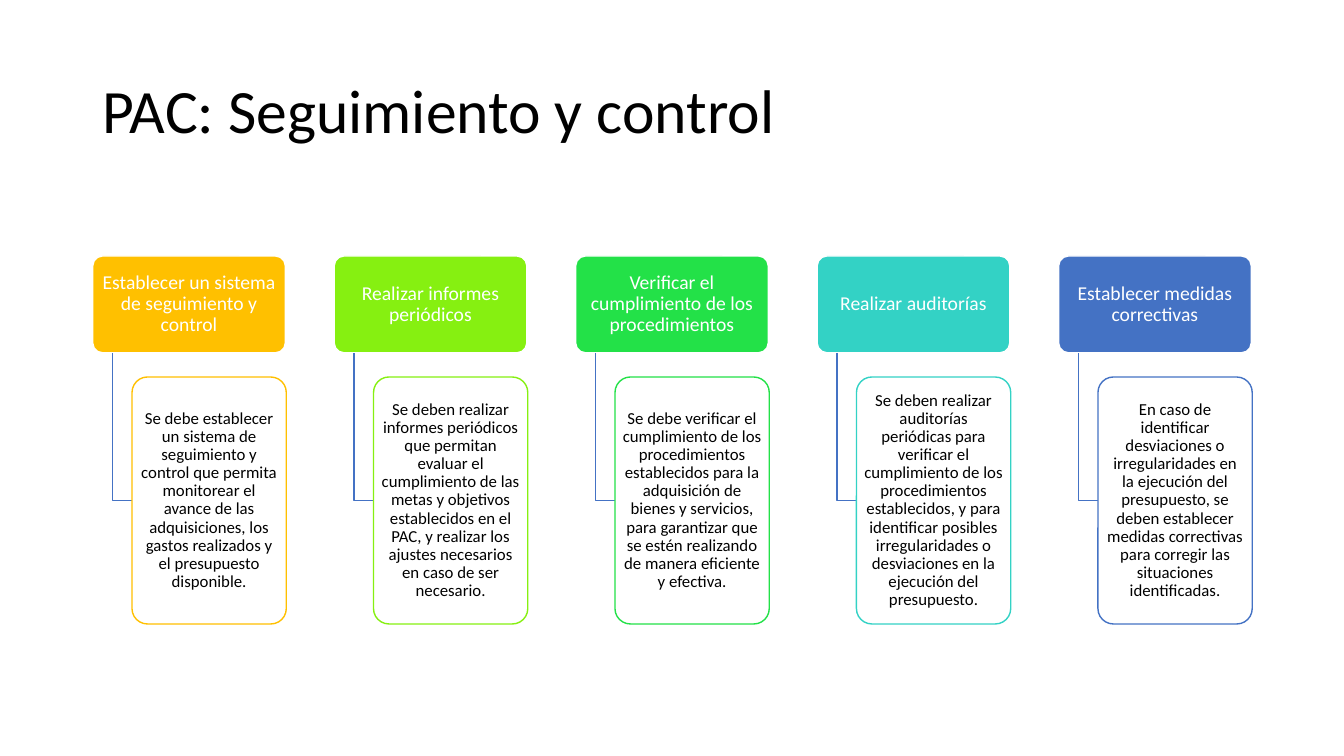
import pptx
import pptx.util
import pptx.dml.color
import pptx.enum.shapes
import pptx.enum.text
import pptx.oxml.ns
import lxml.etree
from dataclasses import dataclass

PX = 9144
ALIGN = pptx.enum.text.PP_ALIGN
MIDDLE = pptx.enum.text.MSO_ANCHOR.MIDDLE


@dataclass(frozen=True)
class Theme:
    font: str = "Calibri"
    dark: str = "000000"
    light: str = "FFFFFF"
    elbow: str = "4472C4"
    title_size: int = 44
    step_size: int = 14
    detail_size: int = 12
    line: int = 1
    detail_opacity: int = 90


THEME = Theme()

STEPS = [
    ("FFC000", "Establecer un sistema de seguimiento y control",
     "Se debe establecer un sistema de seguimiento y control que permita monitorear el avance "
     "de las adquisiciones, los gastos realizados y el presupuesto disponible."),
    ("86F011", "Realizar informes periódicos",
     "Se deben realizar informes periódicos que permitan evaluar el cumplimiento de las metas y "
     "objetivos establecidos en el PAC, y realizar los ajustes necesarios en caso de ser necesario."),
    ("23E148", "Verificar el cumplimiento de los procedimientos",
     "Se debe verificar el cumplimiento de los procedimientos establecidos para la adquisición de "
     "bienes y servicios, para garantizar que se estén realizando de manera eficiente y efectiva."),
    ("33D2C5", "Realizar auditorías",
     "Se deben realizar auditorías periódicas para verificar el cumplimiento de los procedimientos "
     "establecidos, y para identificar posibles irregularidades o desviaciones en la ejecución del "
     "presupuesto."),
    ("4472C4", "Establecer medidas correctivas",
     "En caso de identificar desviaciones o irregularidades en la ejecución del presupuesto, se "
     "deben establecer medidas correctivas para corregir las situaciones identificadas."),
]


def px(n):
    return pptx.util.Emu(round(n * PX))


def rgb(color):
    return pptx.dml.color.RGBColor.from_string(color)


def set_all(target, values):
    for name, value in values.items():
        setattr(target, name, value)


def write(sp, text, size, color, align, insets):
    tf = sp.text_frame
    left, top = insets
    set_all(tf, {"word_wrap": True, "vertical_anchor": MIDDLE,
                 "margin_left": px(left), "margin_right": px(left),
                 "margin_top": px(top), "margin_bottom": px(top)})
    p = tf.paragraphs[0]
    set_all(p, {"alignment": align, "line_spacing": 0.9})
    r = p.add_run()
    r.text = text
    set_all(r.font, {"name": THEME.font, "size": pptx.util.Pt(size)})
    r.font.color.rgb = rgb(color)


def outline(sp, color):
    sp.shadow.inherit = False
    sp.line.color.rgb = rgb(color)
    sp.line.width = pptx.util.Pt(THEME.line)


def add_title(s, box, text):
    sp = s.shapes.add_textbox(*map(px, box))
    write(sp, text, THEME.title_size, THEME.dark, ALIGN.LEFT, (10, 5))


def add_card(s, box, fill, line, text, size, color):
    sp = s.shapes.add_shape(pptx.enum.shapes.MSO_SHAPE.ROUNDED_RECTANGLE, *map(px, box))
    sp.adjustments[0] = 0.1
    sp.fill.solid()
    sp.fill.fore_color.rgb = rgb(fill)
    outline(sp, line)
    write(sp, text, size, color, ALIGN.CENTER, (3, 2))
    return sp


def add_elbow(s, x, top, right, bottom):
    builder = s.shapes.build_freeform(px(x), px(top))
    builder.add_line_segments([(px(x), px(bottom)), (px(right), px(bottom))], close=False)
    sp = builder.convert_to_shape()
    sp.fill.background()
    outline(sp, THEME.elbow)


def add_step(s, box, color, heading, detail):
    x, y, w, h = box
    head_h, indent, gap = 96, 39, 24
    detail_x, detail_y = x + indent, y + head_h + gap
    detail_h = h - head_h - gap
    add_card(s, (x, y, w - 1, head_h), color, THEME.light, heading, THEME.step_size, THEME.light)
    add_elbow(s, x + indent / 2, y + head_h, detail_x, detail_y + detail_h / 2)
    sp = add_card(s, (detail_x, detail_y, w - indent, detail_h), THEME.light, color,
                  detail, THEME.detail_size, THEME.dark)
    clr = sp.fill._xPr.find(".//" + pptx.oxml.ns.qn("a:srgbClr"))
    alpha = lxml.etree.SubElement(clr, pptx.oxml.ns.qn("a:alpha"))
    alpha.set("val", str(THEME.detail_opacity * 1000))


def add_steps(s, box, steps):
    x, y, w, h = box
    step_w = 192
    pitch = (w - step_w) / (len(steps) - 1)
    for i, step in enumerate(steps):
        add_step(s, (x + i * pitch, y, step_w, h), *step)


def main():
    prs = pptx.Presentation()
    set_all(prs, {"slide_width": px(1333), "slide_height": px(750)})
    s = prs.slides.add_slide(prs.slide_layouts[6])
    add_title(s, (92, 40, 1150, 145), "PAC: Seguimiento y control")
    add_steps(s, (92, 254, 1150, 365), STEPS)
    prs.save("out.pptx")


if __name__ == "__main__":
    main()
